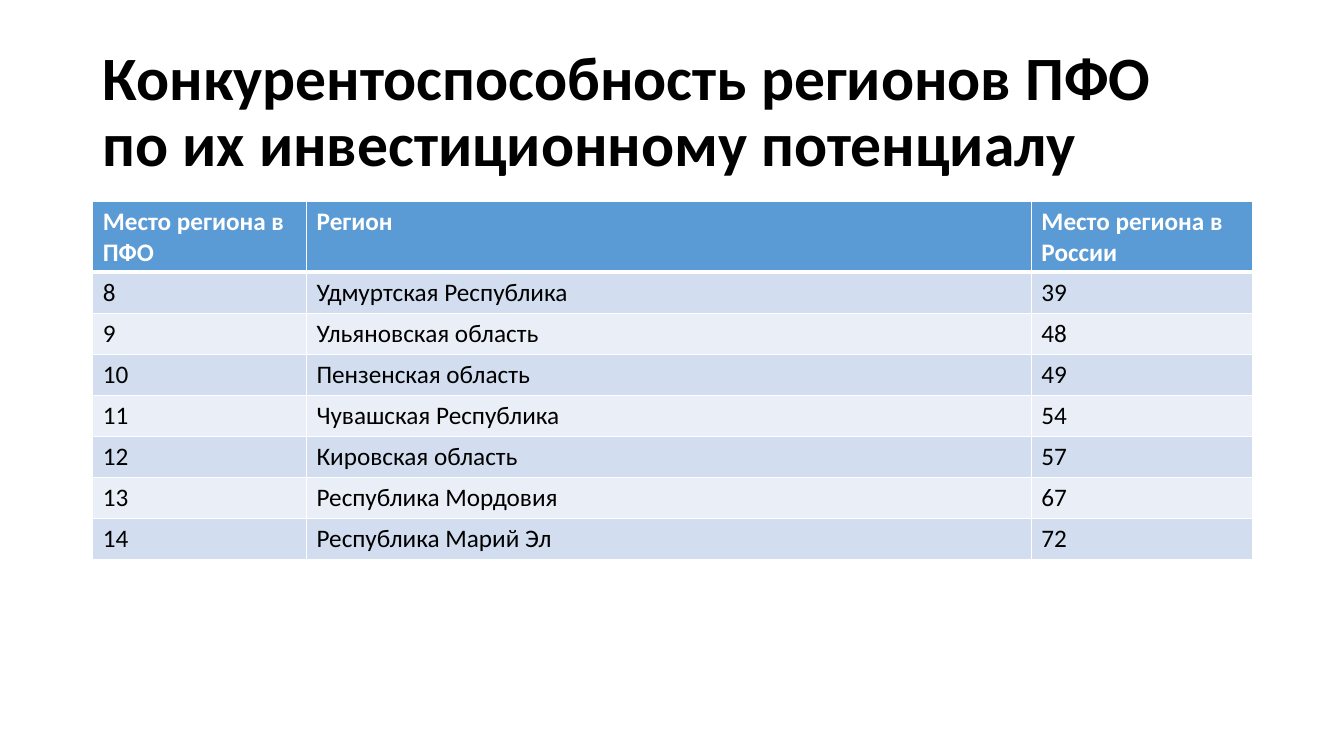
from dataclasses import dataclass

from lxml.etree import SubElement
from pptx import Presentation
from pptx.dml.color import RGBColor
from pptx.enum.text import MSO_ANCHOR
from pptx.oxml.ns import qn
from pptx.util import Inches, Pt


@dataclass(frozen=True)
class Theme:
    font: str = "Calibri"
    title_size: int = 44
    table_size: int = 18
    ink: str = "000000"
    paper: str = "FFFFFF"
    header: str = "5B9BD5"
    bands: tuple = ("D2DEEF", "EAEFF7")
    rule: int = 1
    header_rule: int = 3


@dataclass(frozen=True)
class Box:
    left: float
    top: float
    width: float
    height: float

    def lengths(self):
        return [Inches(value) for value in (self.left, self.top, self.width, self.height)]


THEME = Theme()
TITLE_LINES = ["Конкурентоспособность регионов ПФО", "по их инвестиционному потенциалу"]
HEADINGS = ("Место региона в ПФО", "Регион", "Место региона в России")
FIRST_PLACE = 8
REGIONS = [
    ("Удмуртская Республика", 39),
    ("Ульяновская область", 48),
    ("Пензенская область", 49),
    ("Чувашская Республика", 54),
    ("Кировская область", 57),
    ("Республика Мордовия", 67),
    ("Республика Марий Эл", 72),
]
COLUMN_WIDTHS = (2.12, 7.19, 2.19)
HEADER_HEIGHT = 0.69


def add_span(para, text, size, color, bold):
    span = para.add_run()
    span.text = text
    span.font.color.rgb = RGBColor.from_string(color)
    formats = {"name": THEME.font, "size": Pt(size), "bold": bold}
    for name, value in formats.items():
        setattr(span.font, name, value)


def add_title(page, box):
    frame = page.shapes.add_textbox(*box.lengths()).text_frame
    formats = {"word_wrap": True, "vertical_anchor": MSO_ANCHOR.MIDDLE}
    for name, value in formats.items():
        setattr(frame, name, value)
    para = frame.paragraphs[0]
    para.line_spacing = 0.9
    for index, line in enumerate(TITLE_LINES):
        if index:
            para.add_line_break()
        add_span(para, line, THEME.title_size, THEME.ink, True)


def set_borders(cell, top, bottom):
    properties = cell._tc.get_or_add_tcPr()
    widths = {"a:lnL": THEME.rule, "a:lnR": THEME.rule, "a:lnT": top, "a:lnB": bottom}
    for tag, width in widths.items():
        line = SubElement(properties, qn(tag), w=str(Pt(width)))
        fill = SubElement(line, qn("a:solidFill"))
        SubElement(fill, qn("a:srgbClr"), val=THEME.paper)


def fill_cell(cell, text, row_index):
    is_header = row_index == 0
    top = THEME.header_rule if row_index == 1 else THEME.rule
    bottom = THEME.header_rule if is_header else THEME.rule
    set_borders(cell, top, bottom)
    background = THEME.header if is_header else THEME.bands[(row_index - 1) % 2]
    cell.fill.solid()
    cell.fill.fore_color.rgb = RGBColor.from_string(background)
    color = THEME.paper if is_header else THEME.ink
    add_span(cell.text_frame.paragraphs[0], text, THEME.table_size, color, is_header)


def add_ranking(page, box):
    places = enumerate(REGIONS, FIRST_PLACE)
    rows = [HEADINGS] + [(str(place), region, str(rank)) for place, (region, rank) in places]
    table = page.shapes.add_table(len(rows), len(HEADINGS), *box.lengths()).table
    for column, width in zip(table.columns, COLUMN_WIDTHS):
        column.width = Inches(width * box.width / sum(COLUMN_WIDTHS))
    body_height = (box.height - HEADER_HEIGHT) / len(REGIONS)
    for row_index, texts in enumerate(rows):
        table.rows[row_index].height = Inches(body_height if row_index else HEADER_HEIGHT)
        for column_index, text in enumerate(texts):
            fill_cell(table.cell(row_index, column_index), text, row_index)


def main():
    deck = Presentation()
    deck.slide_width = Inches(13.33)
    deck.slide_height = Inches(7.5)
    page = deck.slides.add_slide(deck.slide_layouts[6])
    add_title(page, Box(0.92, 0.4, 11.5, 1.45))
    add_ranking(page, Box(0.92, 2, 11.5, 3.54))
    deck.save("out.pptx")


if __name__ == "__main__":
    main()
